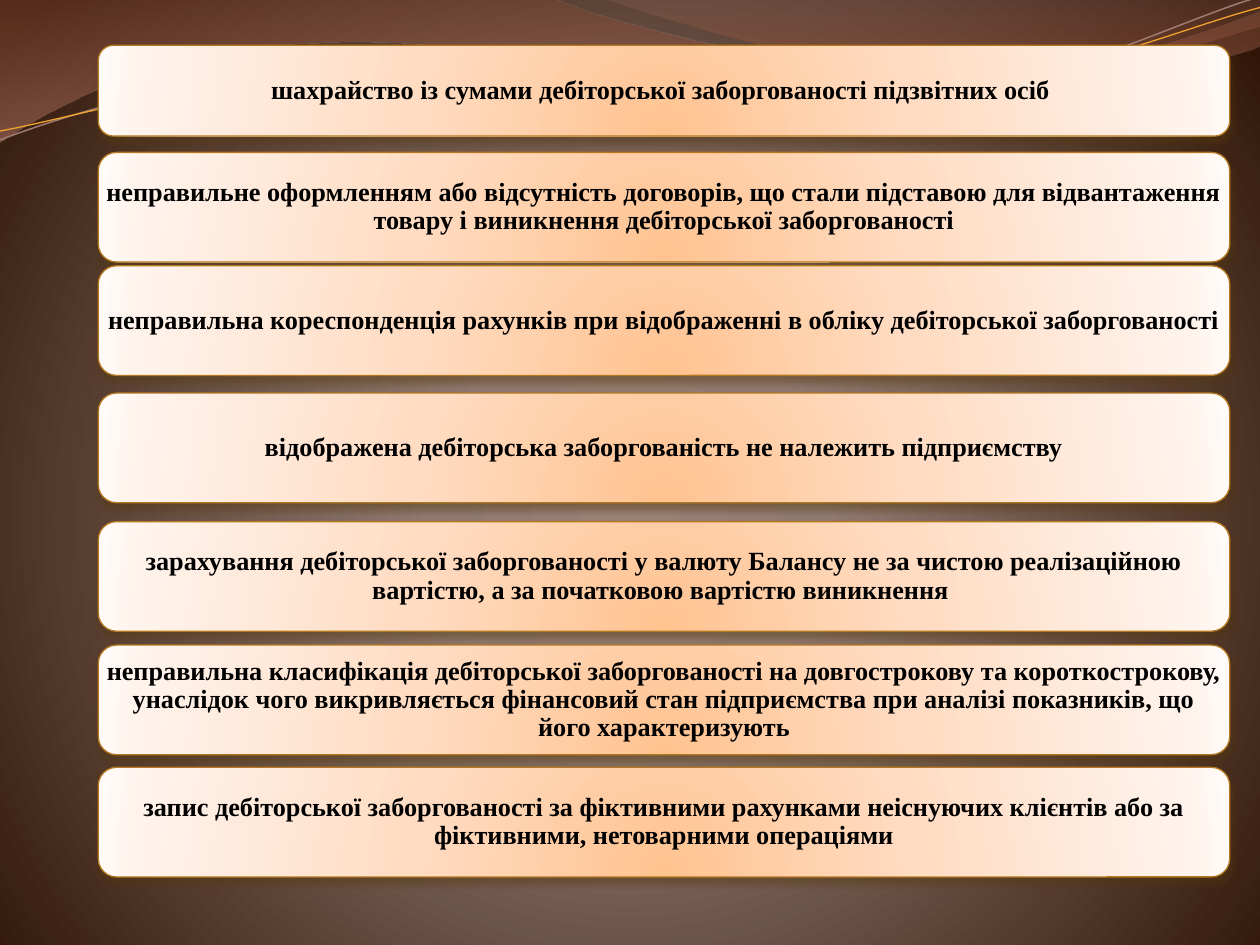
import math
from lxml import etree
from pptx import Presentation, util as u
from pptx.dml.color import RGBColor
from pptx.enum import shapes, text
from pptx.oxml.ns import qn

HUES = {
    "ink": "000000", "edge": "B47820", "shade": "56390E",
    "rose": "A07B71", "gold": "F0A22E",
}
BACK = [(0, "998176", 100), (25, "907A70", 100), (100, "311607", 100)]
PEACH = [(0, "FFC390", 100), (43, "FFDBC1", 100),
         (93, "FFF3EC", 100), (100, "FFFBF9", 100)]
WAVES = [
    ([(0, "814733", 45), (100, "B17667", 55)],
     [(0, 0), (4.4, -0.01), (4.76, 0.17, 6.64, 0.63, 7.58, 0.63),
      (8.53, 0.63, 9.58, 0.26, 10, 0.09), (10.01, 0.36),
      (9.83, 0.44, 8.7, 0.76, 7.46, 0.75),
      (6.22, 0.75, 3.82, 0.28, 2.57, 0.34),
      (1.29, 0.36, 0.46, 0.83, -0.01, 1.13), (0, 0)]),
    ([(0, "8C6359", 30), (80, "A15135", 45)],
     [(4.79, -0.01), (5.09, 0.11, 6.82, 0.62, 7.69, 0.65),
      (8.56, 0.69, 9.61, 0.32, 10, 0.21), (10, 0), (4.79, -0.01)]),
]
TILT = -2.7
LINES = [
    ("rose", 0.85, (4.99, 0.58),
     [(0, 1.11), (0.48, 0.93, 1.58, 0.57, 2.77, 0.52),
      (3.95, 0.47, 5.93, 0.89, 7.13, 0.8),
      (8.33, 0.71, 9.38, 0.15, 9.98, -0.02)]),
    ("gold", 0.75, (5, 0.59),
     [(0, 1.04), (0.47, 0.96, 1.64, 0.61, 2.83, 0.56),
      (4.03, 0.51, 5.97, 0.84, 7.17, 0.75),
      (8.36, 0.67, 9.41, 0.21, 10, 0.06)]),
]
LEFT, WIDE, TALL = 0.78, 8.98, 0.87
CARDS = [
    (0.36, 0.72, "шахрайство із сумами дебіторської заборгованості підзвітних осіб "),
    (1.21, TALL, "неправильне оформленням або відсутність договорів, що стали "
     "підставою для відвантаження товару і виникнення дебіторської заборгованості"),
    (2.11, TALL, "неправильна кореспонденція рахунків при відображенні в обліку "
     "дебіторської заборгованості"),
    (3.12, TALL, "відображена дебіторська заборгованість не належить підприємству"),
    (4.14, TALL, "зарахування дебіторської заборгованості у валюту Балансу не за "
     "чистою реалізаційною вартістю, а за початковою вартістю виникнення "),
    (5.12, TALL, "неправильна класифікація дебіторської заборгованості на "
     "довгострокову та короткострокову, унаслідок чого викривляється фінансовий "
     "стан підприємства при аналізі показників, що його характеризують"),
    (6.09, TALL, "запис дебіторської заборгованості за фіктивними рахунками "
     "неіснуючих клієнтів або за фіктивними, нетоварними операціями"),
]


def rgb(name):
    return RGBColor.from_string(HUES[name])


def node(top, tag, **attrs):
    return etree.SubElement(top, qn(tag), {k: str(v) for k, v in attrs.items()})


def tint(top, hue, alpha):
    color = node(top, "a:srgbClr", val=hue)
    if alpha < 100:
        node(color, "a:alpha", val=alpha * 1000)


def blend(owner, fill, stops, focus=None):
    fill.gradient()
    grad = owner.find(".//" + qn("a:gradFill"))
    for kid in list(grad):
        grad.remove(kid)
    group = node(grad, "a:gsLst")
    for pos, hue, alpha in stops:
        tint(node(group, "a:gs", pos=pos * 1000), hue, alpha)
    if focus:
        area = node(grad, "a:path", path="circle")
        sides = {k: v * 1000 for k, v in zip("ltrb", focus)}
        node(area, "a:fillToRect", **sides)
    else:
        node(grad, "a:lin", ang=90 * 60000, scaled=1)


def pairs(step):
    return list(zip(step[::2], step[1::2]))


def curve(slide, steps, close):
    ends = [(u.Inches(x), u.Inches(y)) for x, y in (s[-2:] for s in steps)]
    pen = slide.shapes.build_freeform(*ends[0])
    pen.add_line_segments(ends[1:], close=close)
    shape = pen.convert_to_shape()
    legs = list(shape._element.iter(qn("a:lnTo")))
    for leg, step in zip(legs, steps[1:]):
        if len(step) == 6:
            bend = etree.Element(qn("a:cubicBezTo"))
            for x, y in pairs(step):
                node(bend, "a:pt", x=u.Inches(x) - shape.left,
                     y=u.Inches(y) - shape.top)
            leg.getparent().replace(leg, bend)
    shape.shadow.inherit = False
    return shape


def wave(slide, stops, steps):
    shape = curve(slide, steps, True)
    blend(shape._element, shape.fill, stops)
    shape.line.fill.background()


def turn(step, hub, angle):
    c, s = math.cos(math.radians(angle)), math.sin(math.radians(angle))
    out = []
    for x, y in pairs(step):
        dx, dy = x - hub[0], y - hub[1]
        out += [hub[0] + dx * c - dy * s, hub[1] + dx * s + dy * c]
    return out


def strand(slide, hue, size, hub, steps):
    shape = curve(slide, [turn(s, hub, -TILT) for s in steps], False)
    shape.rotation = TILT
    shape.fill.background()
    shape.line.color.rgb = rgb(hue)
    shape.line.width = u.Pt(size)


def shade(shape):
    shape.shadow.inherit = False
    glow = shape._element.spPr.find(qn("a:effectLst"))
    drop = node(glow, "a:outerShdw", blurRad=u.Pt(4.5), dist=u.Pt(3),
                dir=90 * 60000, rotWithShape=0)
    tint(drop, HUES["shade"], 48)


def card(slide, top, tall, words):
    box = [u.Inches(v) for v in (LEFT, top, WIDE, tall)]
    shape = slide.shapes.add_shape(shapes.MSO_SHAPE.ROUNDED_RECTANGLE, *box)
    blend(shape._element, shape.fill, PEACH, (50, 130, 50, -30))
    shape.line.color.rgb = rgb("edge")
    shape.line.width = u.Pt(0.75)
    shade(shape)
    frame = shape.text_frame
    frame.word_wrap = True
    frame.vertical_anchor = text.MSO_ANCHOR.MIDDLE
    frame.margin_left = frame.margin_right = u.Inches(0.02)
    frame.margin_top = frame.margin_bottom = u.Inches(0.02)
    para = frame.paragraphs[0]
    para.alignment = text.PP_ALIGN.CENTER
    para.line_spacing = 0.9
    run = para.add_run()
    run.text = words
    run.font.name = "Times New Roman"
    run.font.size = u.Pt(15)
    run.font.bold = True
    run.font.color.rgb = rgb("ink")


def main():
    deck = Presentation()
    deck.slide_width, deck.slide_height = u.Inches(10), u.Inches(7.5)
    slide = deck.slides.add_slide(deck.slide_layouts[6])
    blend(slide._element, slide.background.fill, BACK, (10, 110, 10, 100))
    for item in WAVES:
        wave(slide, *item)
    for item in LINES:
        strand(slide, *item)
    for item in CARDS:
        card(slide, *item)
    deck.save("out.pptx")


if __name__ == "__main__":
    main()
